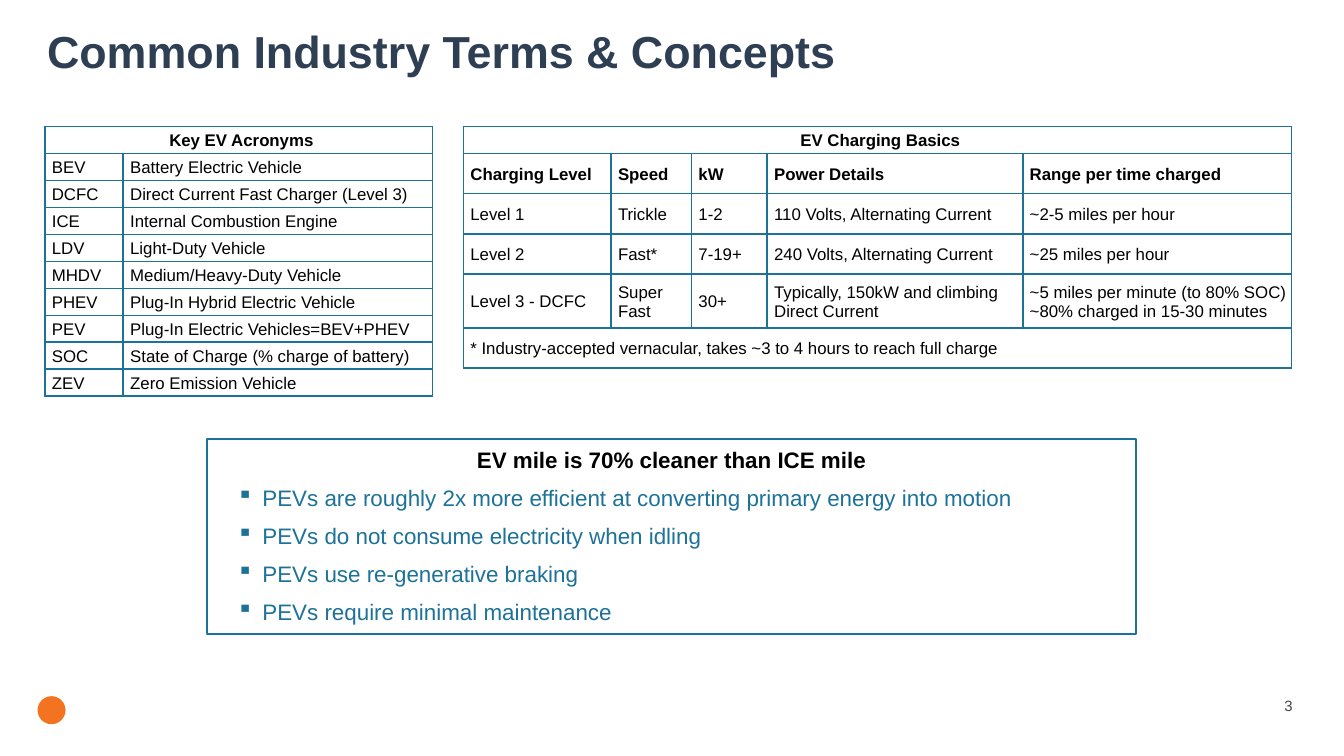
from dataclasses import dataclass

from lxml import etree
from pptx import Presentation
from pptx import util as u
from pptx.dml.color import RGBColor as Rgb
from pptx.enum import shapes, text
from pptx.oxml import ns
from pptx.util import Cm, Pt


@dataclass(frozen=True)
class Theme:
    font: str = "Arial"
    navy: str = "2E3F54"
    teal: str = "1C7298"
    black: str = "000000"
    gray: str = "444444"
    orange: str = "F37321"
    title: int = 24
    body: int = 12
    cell: int = 9
    page: int = 8
    line: int = 1


THEME = Theme()
LEFT, MID, RIGHT = text.PP_ALIGN.LEFT, text.PP_ALIGN.CENTER, text.PP_ALIGN.RIGHT

TERMS = [
    ["Key EV Acronyms"],
    ["BEV", "Battery Electric Vehicle"],
    ["DCFC", "Direct Current Fast Charger (Level 3)"],
    ["ICE", "Internal Combustion Engine"],
    ["LDV", "Light-Duty Vehicle"],
    ["MHDV", "Medium/Heavy-Duty Vehicle"],
    ["PHEV", "Plug-In Hybrid Electric Vehicle"],
    ["PEV", "Plug-In Electric Vehicles=BEV+PHEV"],
    ["SOC", "State of Charge (% charge of battery)"],
    ["ZEV", "Zero Emission Vehicle"],
]
LEVELS = [
    ["EV Charging Basics"],
    ["Charging Level", "Speed", "kW", "Power Details", "Range per time charged"],
    ["Level 1", "Trickle", "1-2", "110 Volts, Alternating Current", "~2-5 miles per hour"],
    ["Level 2", "Fast*", "7-19+", "240 Volts, Alternating Current", "~25 miles per hour"],
    ["Level 3 - DCFC", "Super Fast", "30+",
     "Typically, 150kW and climbing\nDirect Current",
     "~5 miles per minute (to 80% SOC)\n~80% charged in 15-30 minutes"],
    ["* Industry-accepted vernacular, takes ~3 to 4 hours to reach full charge"],
]
CLAIM = "EV mile is 70% cleaner than ICE mile"
FACTS = [
    "PEVs are roughly 2x more efficient at converting primary energy into motion",
    "PEVs do not consume electricity when idling",
    "PEVs use re-generative braking",
    "PEVs require minimal maintenance",
]


def add_run(para, words, size, color, bold=False, align=LEFT):
    para.alignment = align
    run = para.add_run()
    run.text = words
    font = run.font
    font.name, font.size, font.bold = THEME.font, Pt(size), bold
    font.color.rgb = Rgb.from_string(color)


def add_label(slide, box, words, size, color, anchor, bold=False, align=LEFT):
    frame = slide.shapes.add_textbox(*map(Cm, box)).text_frame
    frame.word_wrap = True
    frame.vertical_anchor = anchor
    add_run(frame.paragraphs[0], words, size, color, bold, align)
    return frame


def add_edges(cell):
    """Draw all four borders; they must stand before the fill in the cell's XML."""
    props = cell._tc.get_or_add_tcPr()
    for side in ("lnL", "lnR", "lnT", "lnB"):
        line = etree.SubElement(props, ns.qn(f"a:{side}"), w=str(u.Pt(THEME.line)))
        fill = etree.SubElement(line, ns.qn("a:solidFill"))
        etree.SubElement(fill, ns.qn("a:srgbClr"), val=THEME.teal)


def fill_cell(cell, words, bold, align):
    cell.margin_left, cell.margin_top = Cm(0.13), Cm(0.03)
    cell.margin_right, cell.margin_bottom = Cm(0.03), 0
    cell.vertical_anchor = text.MSO_ANCHOR.MIDDLE
    frame = cell.text_frame
    for i, line in enumerate(words.split("\n")):
        para = frame.add_paragraph() if i else frame.paragraphs[0]
        add_run(para, line, THEME.cell, THEME.black, bold, align)


def add_grid(slide, left, top, cols, rows, data, heads):
    """Add a table; a row with one entry spans it, and the first rows are bold."""
    table = slide.shapes.add_table(
        len(rows), len(cols), Cm(left), Cm(top), Cm(sum(cols)), Cm(sum(rows))).table
    table.first_row = table.horz_banding = False
    for col, width in zip(table.columns, cols):
        col.width = Cm(width)
    for row, height in zip(table.rows, rows):
        row.height = Cm(height)
    for r, entry in enumerate(data):
        for c in range(len(cols)):
            cell = table.cell(r, c)
            add_edges(cell)
            cell.fill.background()
        if len(entry) == 1:
            table.cell(r, 0).merge(table.cell(r, len(cols) - 1))
        for c, words in enumerate(entry):
            fill_cell(table.cell(r, c), words, r < heads, LEFT if r else MID)


def add_bullet(para):
    para.space_before = Pt(6)
    props = para._p.get_or_add_pPr()
    props.set("marL", str(Cm(0.79)))
    props.set("indent", str(Cm(-0.48)))
    etree.SubElement(props, ns.qn("a:buChar"), char="▪")


def add_shape(slide, kind, box):
    shape = slide.shapes.add_shape(kind, *map(Cm, box))
    shape.shadow.inherit = False
    return shape


def add_facts(slide, box):
    shape = add_shape(slide, shapes.MSO_SHAPE.RECTANGLE, box)
    shape.fill.background()
    shape.line.color.rgb = Rgb.from_string(THEME.teal)
    shape.line.width = Pt(THEME.line)
    frame = shape.text_frame
    frame.word_wrap = True
    frame.vertical_anchor = text.MSO_ANCHOR.TOP
    add_run(frame.paragraphs[0], CLAIM, THEME.body, THEME.black, True, MID)
    for fact in FACTS:
        para = frame.add_paragraph()
        add_run(para, fact, THEME.body, THEME.teal)
        add_bullet(para)


def add_badge(slide, box):
    badge = add_shape(slide, shapes.MSO_SHAPE.OVAL, box)
    badge.fill.solid()
    badge.fill.fore_color.rgb = Rgb.from_string(THEME.orange)
    badge.line.fill.background()


def main():
    deck = Presentation()
    deck.slide_width, deck.slide_height = Cm(25.4), Cm(14.29)
    slide = deck.slides.add_slide(deck.slide_layouts[6])

    add_badge(slide, (0.71, 13.16, 0.53, 0.53))
    add_label(slide, (21.23, 12.95, 3.45, 0.76), "3", THEME.page, THEME.gray,
              text.MSO_ANCHOR.MIDDLE, align=RIGHT)
    title = add_label(slide, (0.64, 0.33, 24.13, 1.14), "Common Industry Terms & Concepts",
                      THEME.title, THEME.navy, text.MSO_ANCHOR.BOTTOM, bold=True)
    title.margin_bottom = 0
    title.paragraphs[0].line_spacing = 0.9

    add_grid(slide, 0.85, 2.39, [1.48, 5.84], [0.51] * len(TERMS), TERMS, heads=1)
    add_grid(slide, 8.76, 2.39, [2.79, 1.52, 1.43, 4.83, 5.08],
             [0.51, 0.76, 0.76, 0.76, 1.02, 0.76], LEVELS, heads=2)
    add_facts(slide, (3.92, 8.3, 17.55, 3.69))
    deck.save("out.pptx")


if __name__ == "__main__":
    main()
